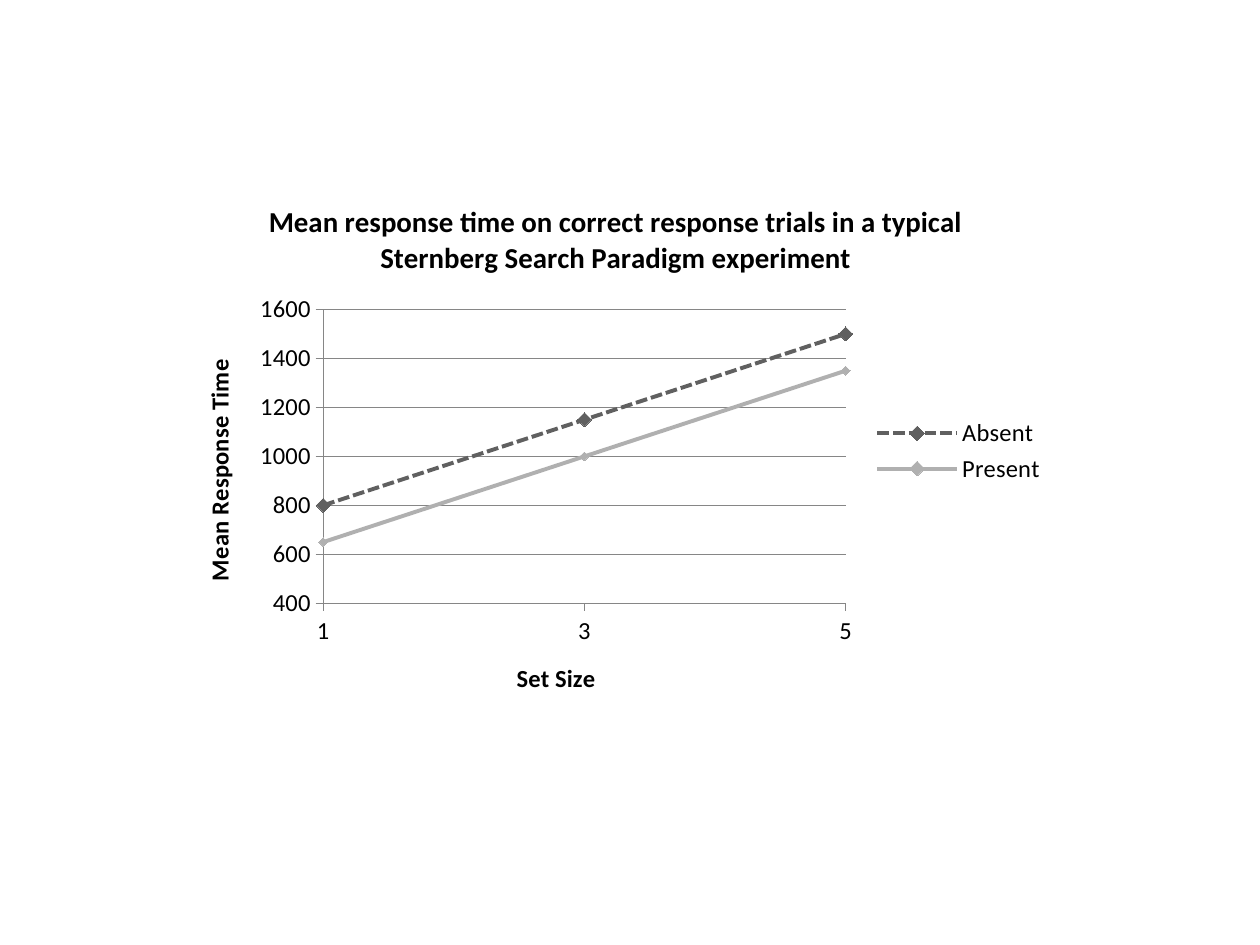
from dataclasses import dataclass

from lxml import etree
from pptx import Presentation
from pptx import util as u
from pptx.chart.data import CategoryChartData
from pptx.dml.color import RGBColor
from pptx.enum import chart as ch
from pptx.enum import dml
from pptx.oxml.ns import qn


@dataclass(frozen=True)
class Theme:
    font: str = "Calibri"
    ink: str = "000000"
    grid: str = "868686"
    absent: str = "606060"
    present: str = "B0B0B0"
    body: float = 14
    title: float = 16.5


def style_font(font, *, name, size, color, bold=False):
    font.name = name
    font.size = u.Pt(size)
    font.bold = bold
    font.color.rgb = RGBColor.from_string(color)


def write_text(frame, content, **style):
    frame.text = content
    style_font(frame.paragraphs[0].runs[0].font, **style)


class ChartSlide:
    def __init__(self, deck, theme):
        self.theme = theme
        self.page = deck.slides.add_slide(deck.slide_layouts[6])

    def text_style(self, size=None, bold=False):
        theme = self.theme
        return dict(name=theme.font, size=size or theme.body,
                    color=theme.ink, bold=bold)

    def rule(self, line):
        line.color.rgb = RGBColor.from_string(self.theme.grid)
        line.width = u.Pt(0.75)

    def line_chart(self, box, title, categories, series):
        data = CategoryChartData()
        data.categories = categories
        for name, values in series.items():
            data.add_series(name, values)
        frame = self.page.shapes.add_chart(
            ch.XL_CHART_TYPE.LINE_MARKERS, *map(u.Inches, box), data)
        chart = frame.chart
        style_font(chart.font, **self.text_style())
        chart.has_title = True
        write_text(chart.chart_title.text_frame, title,
                   **self.text_style(self.theme.title, bold=True))
        chart.has_legend = True
        chart.legend.position = ch.XL_LEGEND_POSITION.RIGHT
        chart.legend.include_in_layout = False
        return chart

    def axis(self, axis, title):
        axis.has_title = True
        write_text(axis.axis_title.text_frame, title,
                   **self.text_style(bold=True))
        axis.major_tick_mark = ch.XL_TICK_MARK.OUTSIDE
        axis.minor_tick_mark = ch.XL_TICK_MARK.NONE
        self.rule(axis.format.line)

    def value_scale(self, axis, low, high, step):
        axis.minimum_scale, axis.maximum_scale = low, high
        axis.major_unit = step
        axis.has_major_gridlines = True
        self.rule(axis.major_gridlines.format.line)

    def series(self, series, color, marker_size, dash=None):
        rgb = RGBColor.from_string(color)
        series.smooth = False
        line = series.format.line
        line.color.rgb = rgb
        line.width = u.Pt(2.25)
        if dash:
            line.dash_style = dash
        marker = series.marker
        marker.style = ch.XL_MARKER_STYLE.DIAMOND
        marker.size = marker_size
        marker.format.fill.solid()
        marker.format.fill.fore_color.rgb = rgb
        marker.format.line.fill.background()

    def plot_area(self, chart, **fractions):
        """Fix the inner plot area and start the lines on the value axis."""
        area = chart._chartSpace.chart.plotArea
        for old in area.findall(qn("c:layout")):
            area.remove(old)
        layout = etree.Element(qn("c:layout"))
        manual = etree.SubElement(layout, qn("c:manualLayout"))
        settings = dict(layoutTarget="inner", xMode="edge", yMode="edge",
                        **fractions)
        for tag, value in settings.items():
            etree.SubElement(manual, qn(f"c:{tag}")).set("val", str(value))
        area.insert(0, layout)

        axis = area.find(qn("c:valAx"))
        cross = axis.find(qn("c:crossBetween"))
        if cross is None:
            cross = etree.Element(qn("c:crossBetween"))
            axis.find(qn("c:crosses")).addnext(cross)
        cross.set("val", "midCat")


def main():
    theme = Theme()
    deck = Presentation()
    deck.slide_width, deck.slide_height = u.Inches(10), u.Inches(7.5)
    slide = ChartSlide(deck, theme)

    # Chart with title and legend
    chart = slide.line_chart(
        (1.37, 1.42, 7.03, 4.32),
        "Mean response time on correct response trials in a typical "
        "Sternberg Search Paradigm experiment",
        ["1", "3", "5"],
        {"Absent": (800, 1150, 1500), "Present": (650, 1000, 1350)})
    slide.plot_area(chart, x=0.17, y=0.24, w=0.59, h=0.54)

    # Axes
    slide.axis(chart.category_axis, "Set Size")
    slide.axis(chart.value_axis, "Mean Response Time")
    slide.value_scale(chart.value_axis, 400, 1600, 200)

    # Lines
    absent, present = chart.plots[0].series
    slide.series(absent, theme.absent, 8, dml.MSO_LINE.SQUARE_DOT)
    slide.series(present, theme.present, 5)

    deck.save("out.pptx")


if __name__ == "__main__":
    main()
